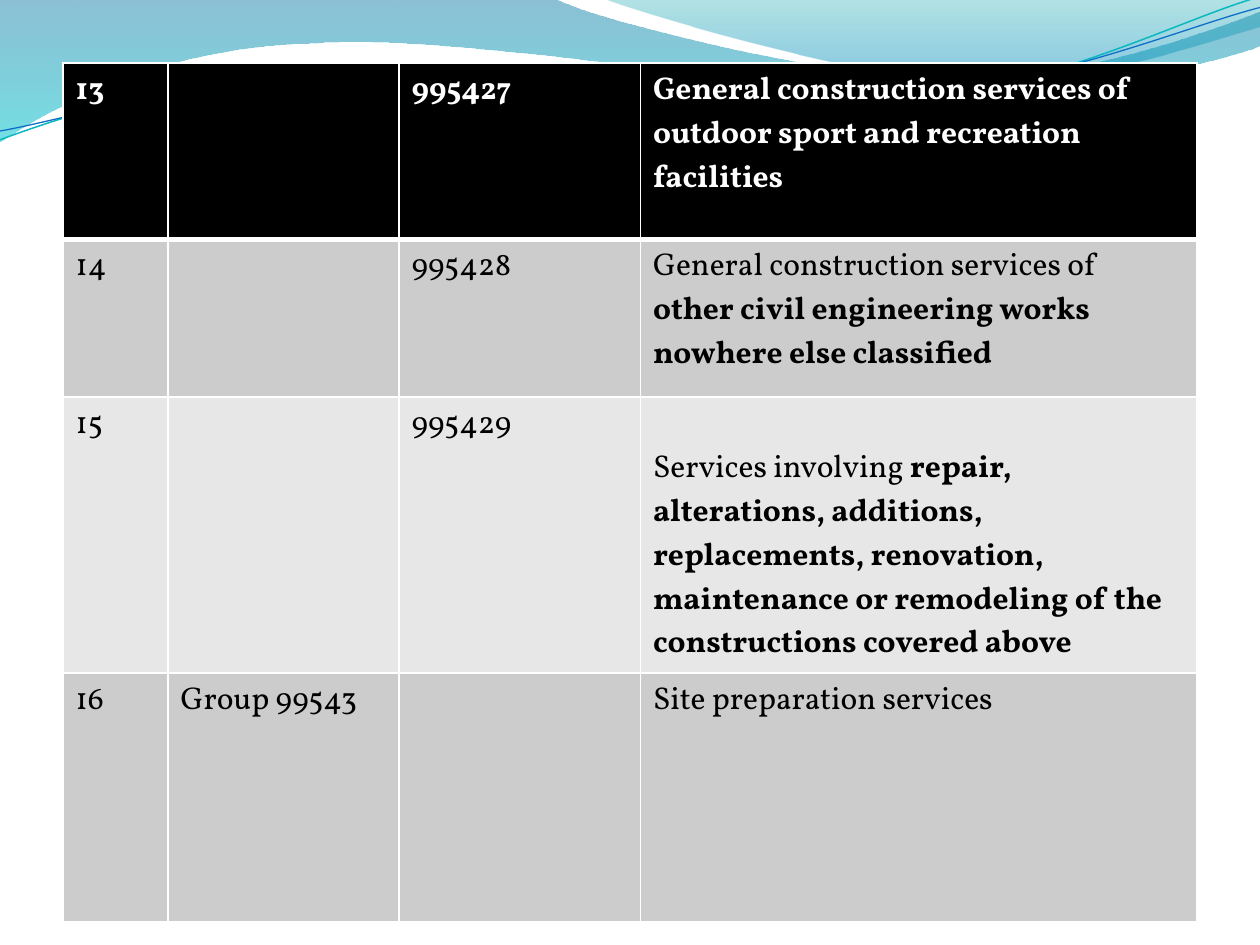
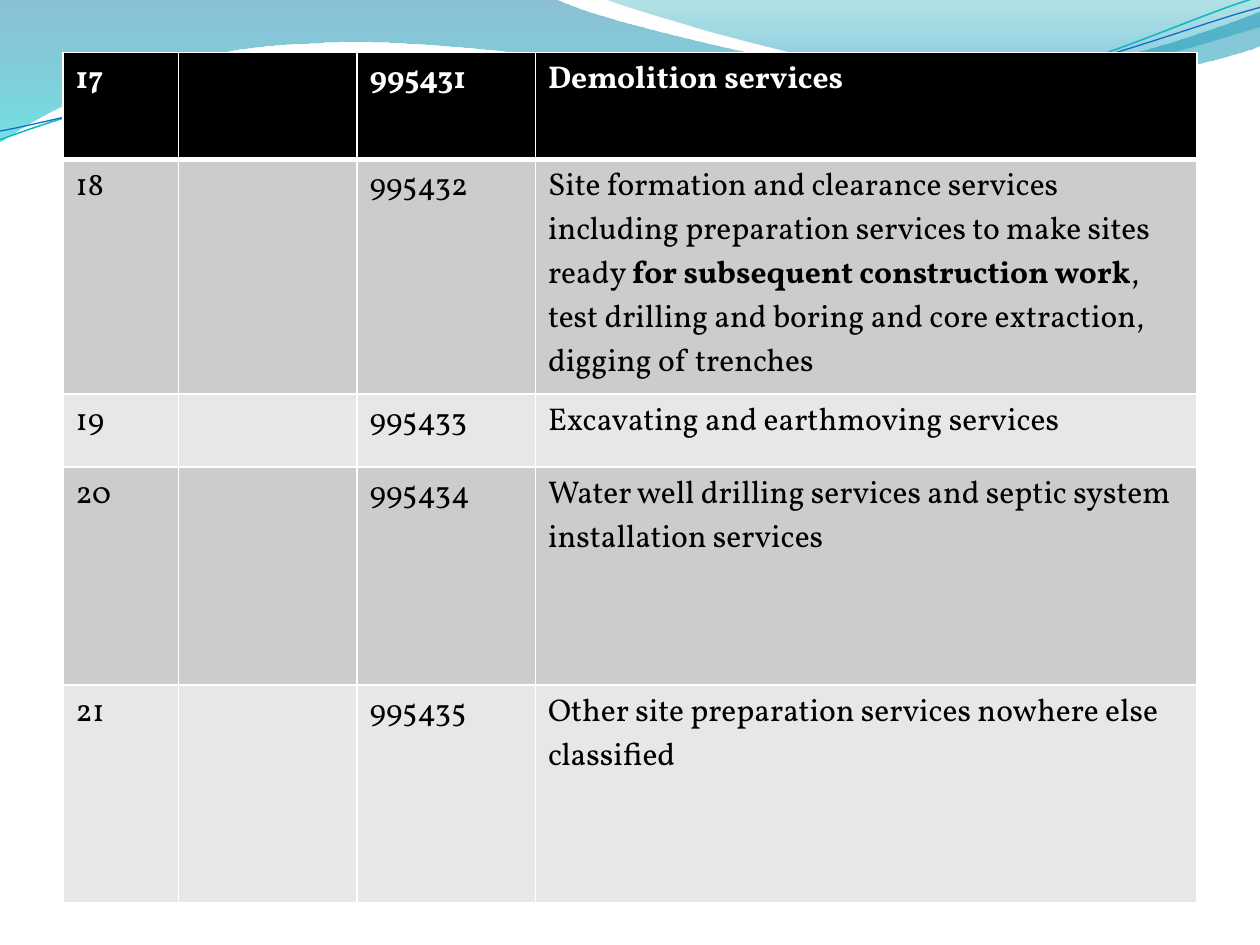
from dataclasses import dataclass
from math import cos, radians, sin

from lxml.etree import SubElement
from pptx import Presentation
from pptx.dml.color import RGBColor
from pptx.oxml.ns import qn
from pptx.util import Inches, Pt


@dataclass(frozen=True)
class Theme:
    """Colours, type and line weights shared by the slides."""
    font: str = "Vollkorn"
    text_size: float = 18
    header_fill: str = "000000"
    header_text: str = "FFFFFF"
    body_text: str = "000000"
    band_fills: tuple = ("CCCCCC", "E7E7E7")
    border: str = "FFFFFF"
    border_width: float = 1
    header_rule_width: float = 3
    wide_wave: tuple = ((0, "0074A1", 45), (100, "00C6CF", 55))
    right_wave: tuple = ((0, "00A1A9", 30), (80, "008BBF", 45))
    upper_strand: tuple = ("0AB8BF", 0.85)
    lower_strand: tuple = ("0F6FC6", 0.75)
    strand_rotation: float = 357.3


THEME = Theme()
COLUMN_UNIT = 1 / 12

WIDE_WAVE = [
    (0, 0), (4.4, -0.01),
    (4.76, 0.17, 6.64, 0.63, 7.58, 0.63), (8.53, 0.63, 9.58, 0.26, 10, 0.09),
    (10.01, 0.36),
    (9.83, 0.44, 8.7, 0.76, 7.46, 0.75), (6.22, 0.75, 3.82, 0.28, 2.57, 0.34),
    (1.29, 0.36, 0.46, 0.83, -0.01, 1.13), (0, 0),
]
RIGHT_WAVE = [
    (4.79, -0.01),
    (5.09, 0.11, 6.82, 0.62, 7.69, 0.65), (8.56, 0.69, 9.61, 0.32, 10, 0.21),
    (10, 0), (4.79, -0.01),
]
UPPER_STRAND = [
    (0, 1.11),
    (0.48, 0.93, 1.58, 0.57, 2.77, 0.52), (3.95, 0.47, 5.93, 0.89, 7.13, 0.8),
    (8.33, 0.71, 9.38, 0.15, 9.98, -0.02),
]
LOWER_STRAND = [
    (0, 1.04),
    (0.47, 0.96, 1.64, 0.61, 2.83, 0.56), (4.03, 0.51, 5.97, 0.84, 7.17, 0.75),
    (8.36, 0.67, 9.41, 0.21, 10, 0.06),
]

CONSTRUCTION_ROWS = [
    ("13", "", "995427",
     "General construction services of outdoor sport and recreation facilities"),
    ("14", "", "995428",
     "General construction services of *other civil engineering works nowhere else classified*"),
    ("15", "", "995429",
     "Services involving *repair, alterations, additions, replacements, renovation, "
     "maintenance or remodeling of the constructions covered above*"),
    ("16", "Group 99543", "", "Site preparation services"),
]
SITE_ROWS = [
    ("17", "", "995431", "Demolition services"),
    ("18", "", "995432",
     "Site formation and clearance services including preparation services to make sites "
     "ready *for subsequent construction work*, test drilling and boring and core "
     "extraction, digging of trenches"),
    ("19", "", "995433", "Excavating and earthmoving services"),
    ("20", "", "995434",
     "Water well drilling services and septic system installation services"),
    ("21", "", "995435", "Other site preparation services nowhere else classified"),
]


def rgb(value):
    """Turn a hex string into a colour."""
    return RGBColor.from_string(value)


def turn(point, degrees):
    """Turn a point clockwise about the origin."""
    x, y = point
    angle = radians(degrees)
    return x * cos(angle) - y * sin(angle), x * sin(angle) + y * cos(angle)


def unturn_points(points, degrees):
    """Place points so that turning their frame brings them back."""
    flat = [turn(point, -degrees) for point in points]
    center = [(min(axis) + max(axis)) / 2 for axis in zip(*flat)]
    shift_x, shift_y = (new - old for new, old in zip(turn(center, degrees), center))
    return [(x + shift_x, y + shift_y) for x, y in flat]


def bend_segments(shape, outline):
    """Join the line segments of each curve into one cubic segment."""
    path = shape.element.spPr.find(".//" + qn("a:path"))
    lines = iter(path.findall(qn("a:lnTo")))
    for segment in outline[1:]:
        first = next(lines)
        if len(segment) == 6:
            first.tag = qn("a:cubicBezTo")
            for line in (next(lines), next(lines)):
                first.append(line[0])
                path.remove(line)


def add_outline(slide, left, top, outline, rotation=0):
    """Draw an outline of corners and curves relative to the given corner."""
    points = [segment[index:index + 2]
              for segment in outline for index in range(0, len(segment), 2)]
    points = [(Inches(left + x), Inches(top + y)) for x, y in unturn_points(points, rotation)]
    builder = slide.shapes.build_freeform(*points[0], scale=1.0)
    builder.add_line_segments(points[1:], close=outline[0] == outline[-1])
    shape = builder.convert_to_shape()
    bend_segments(shape, outline)
    shape.rotation = rotation
    shape.shadow.inherit = False
    return shape


def add_wave(slide, left, top, outline, stops):
    """Draw a closed wave with a translucent downward gradient."""
    shape = add_outline(slide, left, top, outline)
    shape.line.fill.background()
    shape.fill.gradient()
    shape.fill.gradient_angle = 270
    for stop, (position, color, _) in zip(shape.fill.gradient_stops, stops):
        stop.position = position / 100
        stop.color.rgb = rgb(color)
    colors = list(shape.element.spPr.iter(qn("a:srgbClr")))
    for color, (_, _, opacity) in zip(colors, stops):
        SubElement(color, qn("a:alpha"), val=str(opacity * 1000))


def add_strand(slide, left, top, outline, style):
    """Draw an open thin curve in a tilted frame."""
    shape = add_outline(slide, left, top, outline, THEME.strand_rotation)
    color, width = style
    shape.fill.background()
    shape.line.color.rgb = rgb(color)
    shape.line.width = Pt(width)


def add_wave_header(slide, left=0, top=0):
    """Draw the waves and strands along the top of a slide."""
    add_wave(slide, left, top, WIDE_WAVE, THEME.wide_wave)
    add_wave(slide, left, top, RIGHT_WAVE, THEME.right_wave)
    add_strand(slide, left, top, UPPER_STRAND, THEME.upper_strand)
    add_strand(slide, left, top, LOWER_STRAND, THEME.lower_strand)


def set_borders(cell, top_width, bottom_width):
    """Give a cell its four border lines."""
    properties = cell._tc.get_or_add_tcPr()
    side_width = THEME.border_width
    widths = {"L": side_width, "R": side_width, "T": top_width, "B": bottom_width}
    for side, width in widths.items():
        line = SubElement(properties, qn(f"a:ln{side}"), w=str(Pt(width)))
        fill = SubElement(line, qn("a:solidFill"))
        SubElement(fill, qn("a:srgbClr"), val=THEME.border)


def write_cell(cell, text, color, bold):
    """Write a cell, with the parts between asterisks in bold."""
    paragraph = cell.text_frame.paragraphs[0]
    for index, part in enumerate(text.split("*")):
        if not part:
            continue
        run = paragraph.add_run()
        run.text = part
        run.font.name = THEME.font
        run.font.size = Pt(THEME.text_size)
        run.font.bold = bold or index % 2 == 1
        run.font.color.rgb = rgb(color)


def add_services_table(slide, left, top, column_units, heights, rows):
    """Build a service code table with a dark first row and grey bands."""
    widths = [units * COLUMN_UNIT for units in column_units]
    frame = slide.shapes.add_table(
        len(rows), len(widths), Inches(left), Inches(top),
        Inches(sum(widths)), Inches(sum(heights)))
    table = frame.table
    for column, width in zip(table.columns, widths):
        column.width = Inches(width)
    for row_index, (row, height, texts) in enumerate(zip(table.rows, heights, rows)):
        row.height = Inches(height)
        is_header = row_index == 0
        fill = THEME.header_fill if is_header else THEME.band_fills[(row_index - 1) % 2]
        color = THEME.header_text if is_header else THEME.body_text
        top_width = THEME.header_rule_width if row_index == 1 else THEME.border_width
        bottom_width = THEME.header_rule_width if is_header else THEME.border_width
        for cell, text in zip(row.cells, texts):
            set_borders(cell, top_width, bottom_width)
            cell.fill.solid()
            cell.fill.fore_color.rgb = rgb(fill)
            write_cell(cell, text, color, is_header)
    return table


def add_services_slide(presentation, left, top, column_units, heights, rows):
    """Add a slide with the wave header and a services table."""
    slide = presentation.slides.add_slide(presentation.slide_layouts[6])
    add_wave_header(slide)
    return add_services_table(slide, left, top, column_units, heights, rows)


def main():
    """Build and save the presentation."""
    presentation = Presentation()
    presentation.slide_width = Inches(10)
    presentation.slide_height = Inches(7.5)
    construction_table = add_services_slide(
        presentation, 0.5, 0.5, (10, 22, 23, 53),
        (1.4, 1.25, 1.97, 1.97), CONSTRUCTION_ROWS)
    construction_table.cell(2, 3).margin_top = Inches(0.4)
    add_services_slide(
        presentation, 0.5, 5 / 12, (11, 17, 17, 63),
        (0.85, 1.86, 0.58, 1.73, 1.73), SITE_ROWS)
    presentation.save("out.pptx")


if __name__ == "__main__":
    main()
